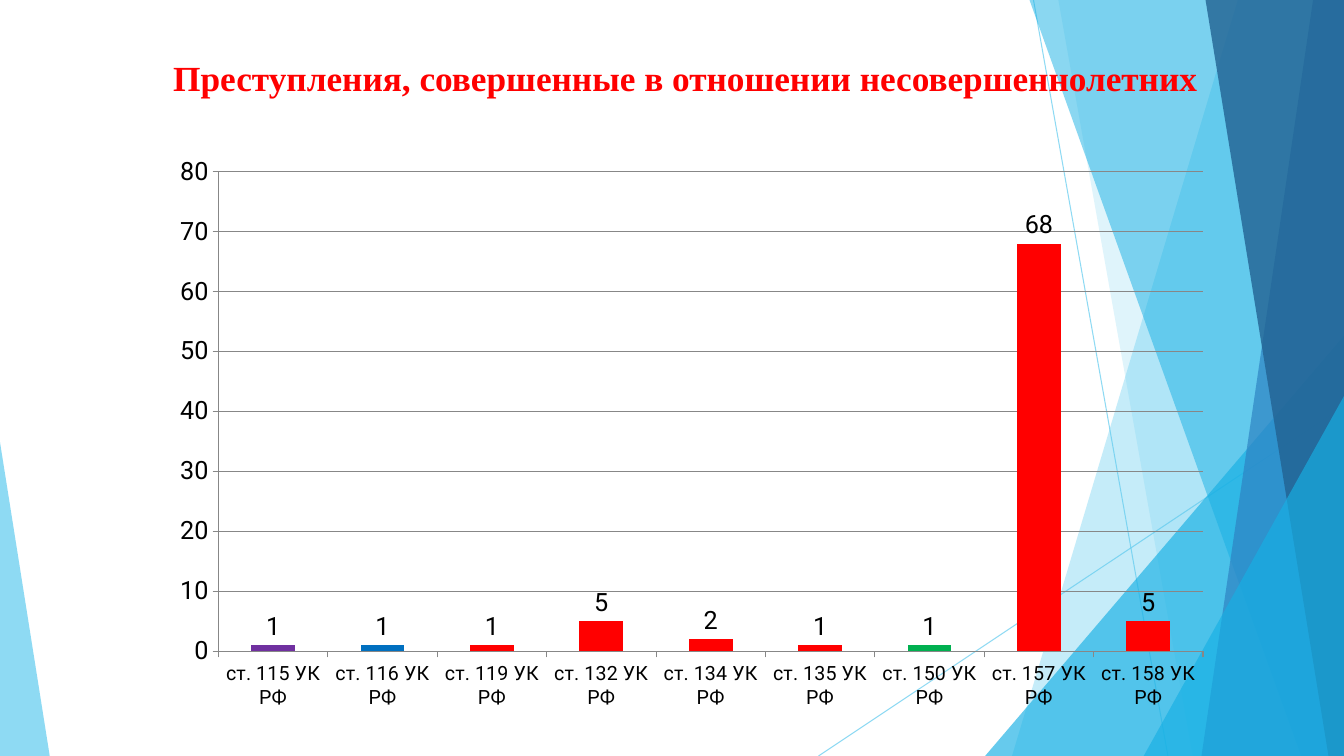
"""Build a slide with a column chart of crimes against minors."""
from lxml.etree import SubElement
from pptx import Presentation
from pptx.chart.data import CategoryChartData
from pptx.dml.color import RGBColor
from pptx.enum.chart import XL_CHART_TYPE, XL_LABEL_POSITION, XL_TICK_MARK
from pptx.enum.shapes import MSO_CONNECTOR, MSO_SHAPE
from pptx.enum.text import MSO_ANCHOR, PP_ALIGN
from pptx.oxml import parse_xml
from pptx.oxml.ns import nsdecls, qn
from pptx.util import Inches, Pt

WIDTH, HEIGHT = Inches(13.333), Inches(7.5)
COLORS = {
    "sky": "5FCBEF", "cyan": "17B0E4", "blue": "2E83C3", "navy": "226292",
    "red": "FF0000", "purple": "7030A0", "azure": "0070C0", "green": "00B050",
    "black": "000000", "gray": "878787",
}
ARTICLES = {115: 1, 116: 1, 119: 1, 132: 5, 134: 2, 135: 1, 150: 1, 157: 68, 158: 5}
POINT_COLORS = {115: "purple", 116: "azure", 150: "green"}


def column(share):
    return round(WIDTH * share / 100)


def row(share):
    return round(HEIGHT * share / 100)


def rgb(name):
    return RGBColor.from_string(COLORS[name])


def paint(fill, name, opacity=100):
    fill.solid()
    fill.fore_color.rgb = rgb(name)
    if opacity < 100:
        color = fill._xPr.find(".//" + qn("a:srgbClr"))
        SubElement(color, qn("a:alpha"), val=str(opacity * 1000))


def finish_facet(shape, name, opacity):
    shape.shadow.inherit = False
    paint(shape.fill, name, opacity)
    shape.line.fill.background()


def add_ray(slide, start, end):
    ray = slide.shapes.add_connector(
        MSO_CONNECTOR.STRAIGHT,
        column(start[0]), row(start[1]), column(end[0]), row(end[1]))
    ray.line.width = Pt(0.75)
    paint(ray.line.fill, "sky", 70)
    SubElement(ray._element.spPr, qn("a:effectLst"))


def add_facet(slide, top, bottom, name, opacity):
    builder = slide.shapes.build_freeform(column(top), 0, scale=1.0)
    builder.add_line_segments(
        [(WIDTH, 0), (WIDTH, HEIGHT), (column(bottom), HEIGHT)], close=True)
    finish_facet(builder.convert_to_shape(), name, opacity)


def add_corner(slide, left, top, width, apex, name, opacity):
    shape = slide.shapes.add_shape(
        MSO_SHAPE.ISOSCELES_TRIANGLE,
        column(left), row(top), column(width), row(100 - top))
    shape.adjustments[0] = apex
    finish_facet(shape, name, opacity)


def add_backdrop(slide):
    add_ray(slide, (76.9, 0), (86.9, 100))
    add_ray(slide, (100, 53.7), (60.9, 100))
    add_facet(slide, 92.1, 75.3, "sky", 36)
    add_facet(slide, 78.75, 88.75, "sky", 20)
    add_corner(slide, 73.3, 44.4, 26.7, 1, "cyan", 66)
    add_facet(slide, 76.6, 96.8, "cyan", 50)
    add_facet(slide, 97.7, 89.4, "blue", 70)
    add_facet(slide, 89.7, 98.85, "navy", 80)
    add_corner(slide, 85.1, 52.4, 14.9, 1, "cyan", 66)
    add_corner(slide, 0, 58.5, 3.7, 0, "sky", 70)


def add_title(slide, text):
    box = slide.shapes.add_textbox(column(8.5), row(6.4), column(85), row(12.8))
    frame = box.text_frame
    frame.word_wrap = True
    frame.vertical_anchor = MSO_ANCHOR.TOP
    frame.margin_top = row(1)
    paragraph = frame.paragraphs[0]
    paragraph.alignment = PP_ALIGN.CENTER
    run = paragraph.add_run()
    run.text = text
    run.font.name = "Times New Roman"
    run.font.size = Pt(25.2)
    run.font.bold = True
    run.font.color.rgb = rgb("red")


def set_font(font, size):
    font.name = "Roboto"
    font.size = Pt(size)
    font.color.rgb = rgb("black")


def style_axis(axis, size):
    axis.major_tick_mark = XL_TICK_MARK.OUTSIDE
    axis.minor_tick_mark = XL_TICK_MARK.NONE
    set_font(axis.tick_labels.font, size)
    paint(axis.format.line.fill, "gray")


def set_plot_area(chart, **shares):
    values = "".join(f'<c:{key} val="{share}"/>' for key, share in shares.items())
    layout = parse_xml(
        f'<c:layout {nsdecls("c")}><c:manualLayout><c:layoutTarget val="inner"/>'
        f'<c:xMode val="edge"/><c:yMode val="edge"/>{values}'
        '</c:manualLayout></c:layout>')
    plot_area = chart._chartSpace.chart.plotArea
    for old in plot_area.findall(qn("c:layout")):
        plot_area.remove(old)
    plot_area.insert(0, layout)


def add_crime_chart(slide):
    data = CategoryChartData()
    data.categories = [f"ст. {article} УК РФ" for article in ARTICLES]
    data.add_series("Series 1", list(ARTICLES.values()))
    chart = slide.shapes.add_chart(
        XL_CHART_TYPE.COLUMN_CLUSTERED,
        column(11.9), row(19.3), column(79.2), row(76), data).chart
    chart.has_legend = False
    chart.has_title = False
    set_font(chart.font, 18)
    set_plot_area(chart, x=0.055, y=0.045, w=0.925, h=0.835)

    style_axis(chart.category_axis, 14)
    value_axis = chart.value_axis
    style_axis(value_axis, 18)
    value_axis.minimum_scale, value_axis.maximum_scale = 0, 80
    value_axis.major_unit = 10
    value_axis.has_major_gridlines = True
    paint(value_axis.major_gridlines.format.line.fill, "gray")

    plot = chart.plots[0]
    plot.vary_by_categories = False
    plot.gap_width = 150
    series = plot.series[0]
    series.invert_if_negative = False
    paint(series.format.fill, "red")
    for index, article in enumerate(ARTICLES):
        if article in POINT_COLORS:
            paint(series.points[index].format.fill, POINT_COLORS[article])
    labels = series.data_labels
    labels.show_value = True
    labels.position = XL_LABEL_POSITION.OUTSIDE_END
    set_font(labels.font, 18)


def main():
    presentation = Presentation()
    presentation.slide_width, presentation.slide_height = WIDTH, HEIGHT
    slide = presentation.slides.add_slide(presentation.slide_layouts[6])
    add_backdrop(slide)
    add_title(slide, "Преступления, совершенные в отношении несовершеннолетних")
    add_crime_chart(slide)
    presentation.save("out.pptx")


if __name__ == "__main__":
    main()
